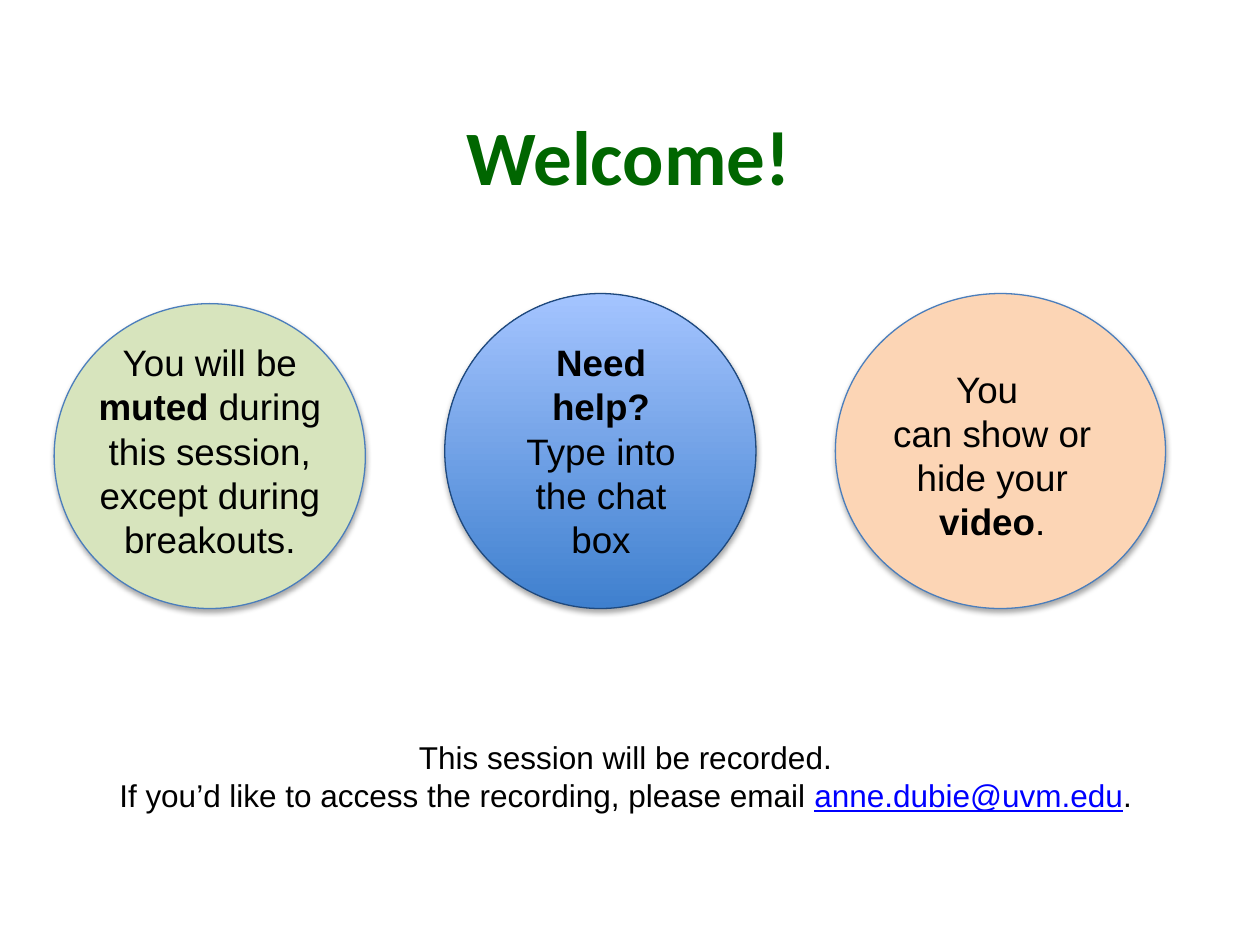
from lxml.etree import SubElement
from pptx import Presentation
from pptx.dml.color import RGBColor
from pptx.enum.shapes import MSO_SHAPE
from pptx.enum.text import MSO_ANCHOR, PP_ALIGN
from pptx.oxml.ns import qn
from pptx.util import Inches, Pt

THEME = {
    "title": "006600", "text": "000000", "link": "0000FF",
    "green": "D7E4BD", "peach": "FCD5B5", "blue": ("3F80CE", "A4C4FF"),
    "edge": "4B7EBC", "navy": "1F497D",
    "title_font": "Calibri", "body_font": "Arial",
    "title_size": 44, "circle_size": 21, "note_size": 18,
}

TITLE = [[("Welcome!", "bold")]]
CIRCLES = [
    {"oval": (0.43, 2.41, 2.47, 2.42), "fill": "green", "line": "edge",
     "box": (0.67, 2.65, 1.99, 1.87),
     "text": [[("You will be ", ""), ("muted", "bold"),
               (" during this session, except during breakouts.", "")]]},
    {"oval": (3.53, 2.33, 2.47, 2.5), "fill": "blue", "line": "navy",
     "box": (3.95, 2.65, 1.64, 1.87),
     "text": [[("Need help?", "bold")], [("Type into the chat box", "")]]},
    {"oval": (6.63, 2.33, 2.62, 2.5), "fill": "peach", "line": "edge",
     "box": (6.88, 2.86, 1.99, 1.51),
     "text": [[("You ", "")],
              [("can show or hide your ", ""), ("video", "bold"), (".", "")]]},
]
NOTE = [
    [("This session will be recorded. ", "")],
    [("If you’d like to access the recording, please email ", ""),
     ("anne.dubie@uvm.edu", "link"), (". ", "")],
]


def rgb(name):
    return RGBColor.from_string(THEME[name])


def add_text(s, at, paragraphs, size, font="body_font", color="text",
             anchor=MSO_ANCHOR.TOP):
    tf = s.shapes.add_textbox(*map(Inches, at)).text_frame
    tf.word_wrap = True
    tf.vertical_anchor = anchor
    for i, runs in enumerate(paragraphs):
        p = tf.add_paragraph() if i else tf.paragraphs[0]
        p.alignment = PP_ALIGN.CENTER
        p.font.name = THEME[font]
        p.font.size = Pt(THEME[size])
        for text, style in runs:
            r = p.add_run()
            r.text = text
            r.font.color.rgb = rgb("link" if style == "link" else color)
            if style == "bold":
                r.font.bold = True
            if style == "link":
                r.font.underline = True


def add_shadow(sp):
    sp.shadow.inherit = False
    effects = sp._element.spPr.find(qn("a:effectLst"))
    shadow = SubElement(effects, qn("a:outerShdw"), blurRad=str(Pt(3.1)),
                        dist=str(Pt(1.8)), dir="5400000", rotWithShape="0")
    color = SubElement(shadow, qn("a:srgbClr"), val=THEME["text"])
    SubElement(color, qn("a:alpha"), val="35000")


def add_circle(s, at, fill, line):
    sp = s.shapes.add_shape(MSO_SHAPE.OVAL, *map(Inches, at))
    if isinstance(THEME[fill], tuple):
        sp.fill.gradient()
        sp.fill.gradient_angle = 90
        for stop, color in zip(sp.fill.gradient_stops, THEME[fill]):
            stop.color.rgb = RGBColor.from_string(color)
    else:
        sp.fill.solid()
        sp.fill.fore_color.rgb = rgb(fill)
    sp.line.color.rgb = rgb(line)
    sp.line.width = Pt(0.75)
    add_shadow(sp)


def main():
    prs = Presentation()
    prs.slide_width, prs.slide_height = Inches(10), Inches(7.5)
    s = prs.slides.add_slide(prs.slide_layouts[6])
    add_text(s, (0.49, 0.6, 9, 1.25), TITLE, "title_size", "title_font",
             "title", MSO_ANCHOR.MIDDLE)
    for c in CIRCLES:
        add_circle(s, c["oval"], c["fill"], c["line"])
        add_text(s, c["box"], c["text"], "circle_size")
    add_text(s, (0, 5.81, 10, 0.71), NOTE, "note_size")
    prs.save("out.pptx")


if __name__ == "__main__":
    main()
